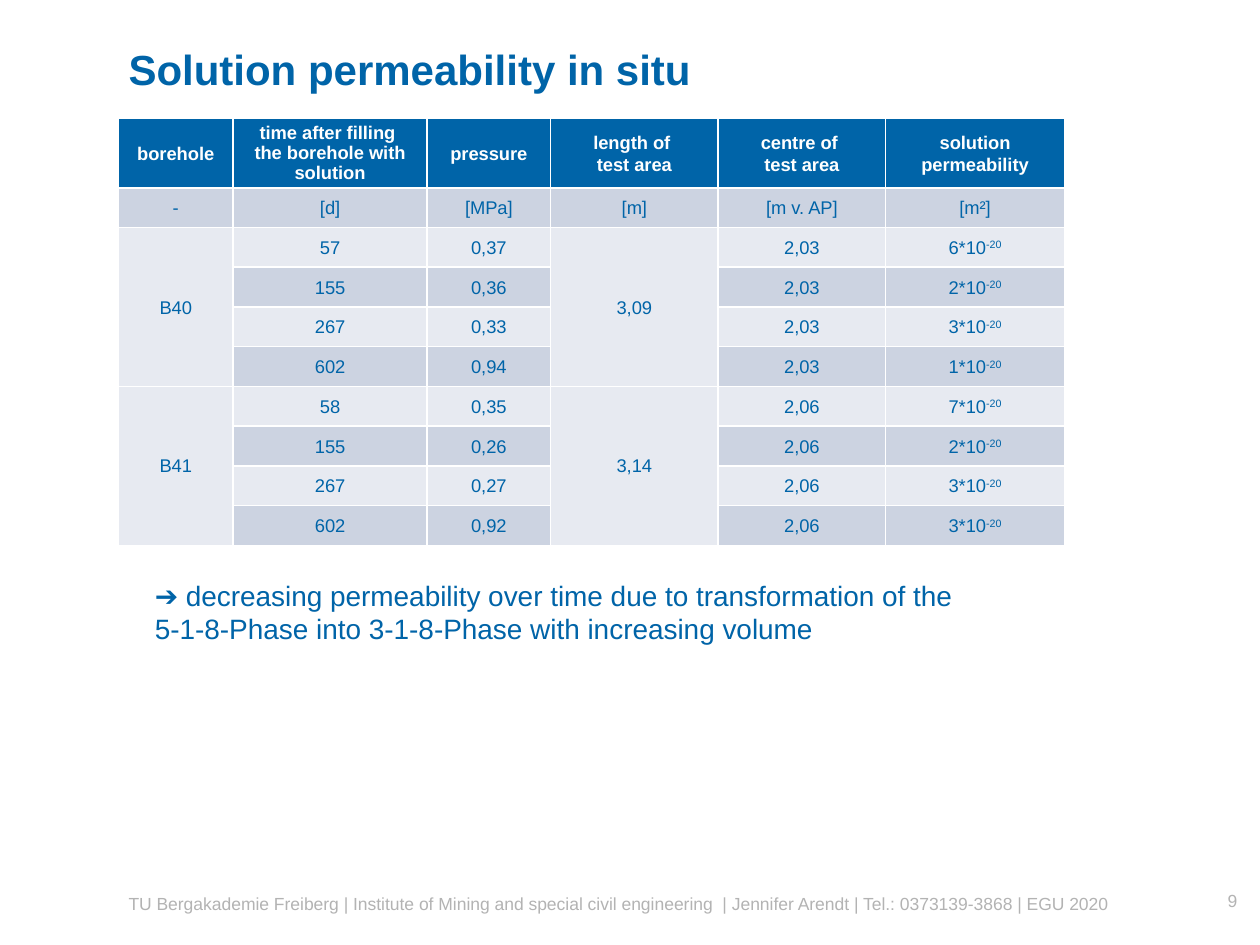
import pptx
import pptx.dml.color
import pptx.enum.text
import pptx.util

Inches = pptx.util.Inches
RGBColor = pptx.dml.color.RGBColor
ALIGN = pptx.enum.text.PP_ALIGN
MIDDLE = pptx.enum.text.MSO_ANCHOR.MIDDLE

BLUE = RGBColor(0x00, 0x64, 0xA8)
GREY = RGBColor(0xB3, 0xB3, 0xB3)
WHITE = RGBColor(0xFF, 0xFF, 0xFF)
BAND_DARK = RGBColor(0xCC, 0xD3, 0xE1)
BAND_LIGHT = RGBColor(0xE7, 0xEA, 0xF1)


def write(para, text, size=10.5, color=BLUE, bold=False, align=ALIGN.LEFT,
          spacing=None, superscript=False):
    """Add a formatted run to a paragraph."""
    para.alignment = align
    if spacing:
        para.line_spacing = spacing
    span = para.add_run()
    span.text = text
    span.font.name = "Arial"
    span.font.size = pptx.util.Pt(size)
    span.font.bold = bold
    span.font.color.rgb = color
    if superscript:
        span.font._element.set("baseline", "30000")


deck = pptx.Presentation()
deck.slide_width, deck.slide_height = Inches(10), Inches(7.5)
page = deck.slides.add_slide(deck.slide_layouts.get_by_name("Title Only"))

# Title
title = page.shapes.title
title.left, title.top = Inches(1.02), Inches(0.2)
title.width, title.height = Inches(7.99), Inches(0.69)
frame = title.text_frame
frame.margin_left = frame.margin_right = frame.margin_top = frame.margin_bottom = 0
frame.vertical_anchor = MIDDLE
write(frame.paragraphs[0], "Solution permeability in situ", size=24, bold=True)

# Table contents: a line break in a heading starts a new paragraph
HEADINGS = ["borehole", "time after filling \nthe borehole with solution", "pressure",
            "length of \ntest area", "centre of \ntest area", "solution permeability"]
UNITS = ["-", "[d]", "[MPa]", "[m]", "[m v. AP]", "[m²]"]
# borehole, length, centre, then time, pressure and permeability factor
BOREHOLES = [
    ("B40", "3,09", "2,03",
     [("57", "0,37", "6"), ("155", "0,36", "2"), ("267", "0,33", "3"), ("602", "0,94", "1")]),
    ("B41", "3,14", "2,06",
     [("58", "0,35", "7"), ("155", "0,26", "2"), ("267", "0,27", "3"), ("602", "0,92", "3")]),
]
rows = [HEADINGS, UNITS]
for borehole, length, centre, tests in BOREHOLES:
    for number, (time, pressure, factor) in enumerate(tests):
        first = number == 0
        rows.append([borehole if first else "", time, pressure,
                     length if first else "", centre, factor + "*10"])

# Table grid
COLUMN_WIDTHS = [0.91, 1.54, 0.98, 1.33, 1.33, 1.42]
HEADER_HEIGHT, TABLE_HEIGHT = 0.55, 3.39
table = page.shapes.add_table(len(rows), len(HEADINGS), Inches(0.94), Inches(0.94),
                              Inches(sum(COLUMN_WIDTHS)), Inches(TABLE_HEIGHT)).table
for column, width in zip(table.columns, COLUMN_WIDTHS):
    column.width = Inches(width)
for index, row in enumerate(table.rows):
    row.height = Inches(HEADER_HEIGHT if index == 0
                        else (TABLE_HEIGHT - HEADER_HEIGHT) / (len(rows) - 1))

# Table cells
for r, values in enumerate(rows):
    for c, value in enumerate(values):
        cell = table.cell(r, c)
        cell.margin_left = cell.margin_right = Inches(0.07)
        cell.margin_top = cell.margin_bottom = 0
        cell.vertical_anchor = MIDDLE
        cell.fill.solid()
        cell.fill.fore_color.rgb = BLUE if r == 0 else BAND_DARK if r % 2 else BAND_LIGHT
        if not value:
            continue
        frame = cell.text_frame
        for number, line in enumerate(value.split("\n")):
            para = frame.add_paragraph() if number else frame.paragraphs[0]
            write(para, line, color=WHITE if r == 0 else BLUE, bold=r == 0,
                  align=ALIGN.CENTER, spacing=1.0 if (r, c) == (0, 1) else 1.07)
        if r > 1 and c == 5:
            write(para, "‑20", align=ALIGN.CENTER, superscript=True)

# Borehole and length cells span their four tests
for top in (2, 6):
    for c in (0, 3):
        table.cell(top, c).merge(table.cell(top + 3, c))

# Conclusion
box = page.shapes.add_textbox(Inches(1.13), Inches(4.54), Inches(6.78), Inches(0.64))
box.text_frame.word_wrap = True
write(box.text_frame.paragraphs[0],
      "➔ decreasing permeability over time due to transformation of the "
      "5-1-8-Phase into 3-1-8-Phase with increasing volume", size=16)

# Footer and page number
FOOTER = ("TU Bergakademie Freiberg | Institute of Mining and special civil engineering  "
          "| Jennifer Arendt | Tel.: 0373139-3868 | EGU 2020")
for left, top, width, text, align in [(1.02, 7.09, 7.99, FOOTER, ALIGN.LEFT),
                                      (9.02, 7.06, 0.8, "9", ALIGN.RIGHT)]:
    box = page.shapes.add_textbox(Inches(left), Inches(top), Inches(width), Inches(0.24))
    frame = box.text_frame
    frame.word_wrap = True
    frame.margin_left = frame.margin_right = frame.margin_top = frame.margin_bottom = 0
    write(frame.paragraphs[0], text, size=10, color=GREY, align=align)

deck.save("out.pptx")
